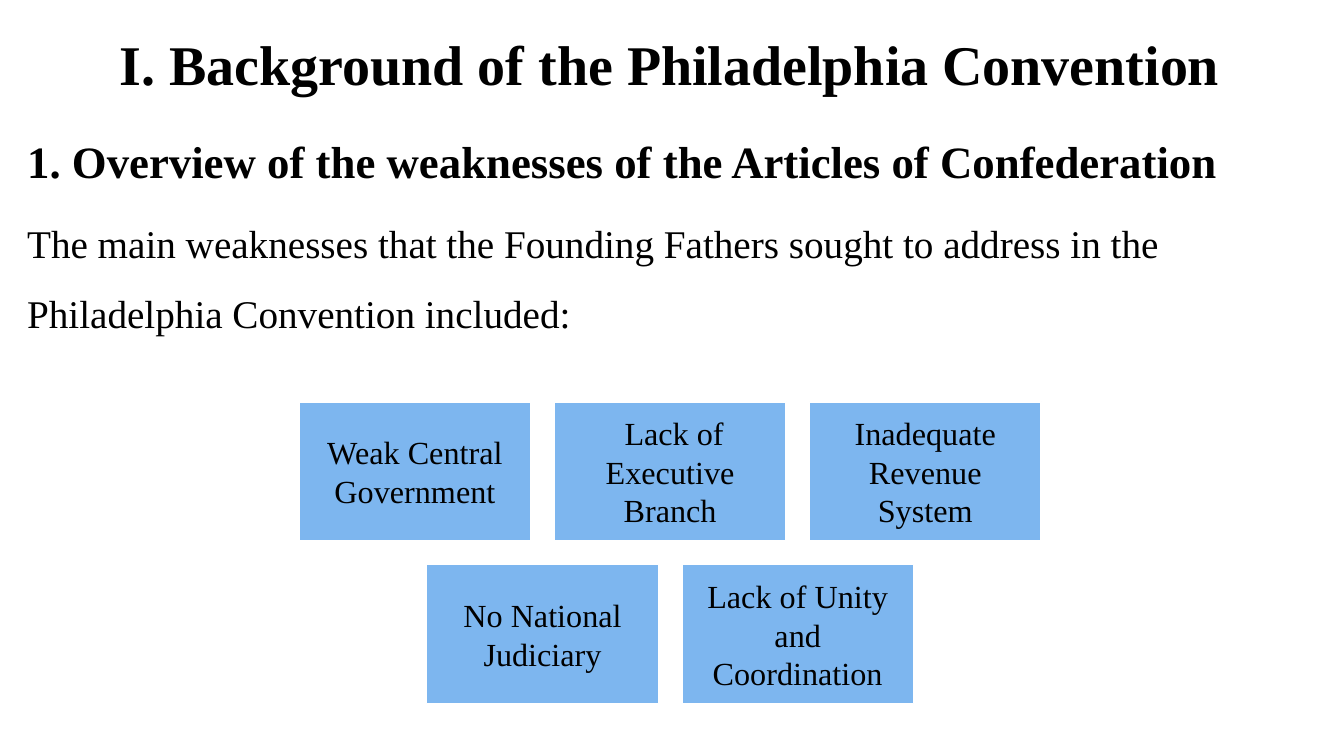
"""Build the slide on the background of the Philadelphia Convention."""
from dataclasses import dataclass

from lxml import etree
from pptx import Presentation
from pptx.dml.color import RGBColor
from pptx.enum.shapes import MSO_SHAPE
from pptx.enum.text import MSO_ANCHOR, MSO_AUTO_SIZE, PP_ALIGN
from pptx.oxml.ns import qn
from pptx.util import Cm, Pt

RECTANGLE = MSO_SHAPE.RECTANGLE
MIDDLE, TOP = MSO_ANCHOR.MIDDLE, MSO_ANCHOR.TOP
NO_AUTOFIT = MSO_AUTO_SIZE.NONE
CENTER, LEFT = PP_ALIGN.CENTER, PP_ALIGN.LEFT
TITLE_AND_CONTENT = 1


@dataclass(frozen=True)
class Theme:
    """Fonts, colours and type sizes of the slide."""
    font: str = "Times New Roman"
    ink: RGBColor = RGBColor(0x00, 0x00, 0x00)
    card: RGBColor = RGBColor(0x7D, 0xB6, 0xEF)
    edge: RGBColor = RGBColor(0xFF, 0xFF, 0xFF)
    title_size: int = 40
    heading_size: int = 32
    body_size: int = 28
    card_size: int = 23


THEME = Theme()

TITLE = "I. Background of the Philadelphia Convention"
HEADING = "1. Overview of the weaknesses of the Articles of Confederation"
INTRODUCTION = ("The main weaknesses that the Founding Fathers sought to address "
                "in the Philadelphia Convention included:")
WEAKNESS_ROWS = [
    ["Weak Central Government", " Lack of Executive Branch", "Inadequate Revenue System"],
    ["No National Judiciary", "Lack of Unity and Coordination"],
]

TEXT_LEFT, TEXT_WIDTH = 0.43, 32.89
CARD_WIDTH, CARD_HEIGHT = 5.84, 3.5
COLUMN_STEP, ROW_STEP = 6.43, 4.1
CARDS_CENTER, CARDS_TOP = 16.89, 10.13


def place(shape, left, top, width, height):
    """Move and size a shape, in centimetres."""
    shape.left, shape.top = Cm(left), Cm(top)
    shape.width, shape.height = Cm(width), Cm(height)


def write(paragraph, text, size, bold=False, align=LEFT):
    """Fill a paragraph and format its runs."""
    paragraph.text = text
    paragraph.alignment = align
    for run in paragraph.runs:
        run.font.name = THEME.font
        run.font.size = Pt(size)
        run.font.bold = bold
        run.font.color.rgb = THEME.ink


def remove_bullet(paragraph):
    """Take the bullet and its hanging indent off a paragraph."""
    properties = paragraph._p.get_or_add_pPr()
    properties.set("marL", "0")
    properties.set("indent", "0")
    etree.SubElement(properties, qn("a:buNone"))


def add_title(slide):
    """Fill the title placeholder."""
    title = slide.shapes.title
    place(title, TEXT_LEFT, 0.53, TEXT_WIDTH, 2.13)
    title.text_frame.auto_size = NO_AUTOFIT
    title.text_frame.vertical_anchor = MIDDLE
    write(title.text_frame.paragraphs[0], TITLE, THEME.title_size, True, CENTER)


def add_overview(slide):
    """Fill the body placeholder with the heading and the introduction."""
    overview = slide.placeholders[1]
    place(overview, TEXT_LEFT, 2.57, TEXT_WIDTH, 7.2)
    frame = overview.text_frame
    frame.auto_size = NO_AUTOFIT
    frame.vertical_anchor = TOP
    heading, introduction = frame.paragraphs[0], frame.add_paragraph()
    write(heading, HEADING, THEME.heading_size, bold=True)
    write(introduction, INTRODUCTION, THEME.body_size)
    for paragraph, space in ((heading, 0), (introduction, 5.6)):
        paragraph.line_spacing = 1.5
        paragraph.space_before = Pt(space)
        remove_bullet(paragraph)


def add_card(slide, weakness, left, top):
    """Draw one weakness as a filled rectangle."""
    card = slide.shapes.add_shape(
        RECTANGLE, Cm(left), Cm(top), Cm(CARD_WIDTH), Cm(CARD_HEIGHT))
    card.shadow.inherit = False
    card.fill.solid()
    card.fill.fore_color.rgb = THEME.card
    card.line.color.rgb = THEME.edge
    card.line.width = Pt(1)
    frame = card.text_frame
    frame.word_wrap = True
    frame.vertical_anchor = MIDDLE
    frame.margin_left = frame.margin_right = Cm(0.25)
    frame.margin_top = frame.margin_bottom = Cm(0.25)
    write(frame.paragraphs[0], weakness, THEME.card_size, align=CENTER)


def add_cards(slide):
    """Lay out the weaknesses in centred rows."""
    for row, weaknesses in enumerate(WEAKNESS_ROWS):
        row_width = (len(weaknesses) - 1) * COLUMN_STEP + CARD_WIDTH
        row_left = CARDS_CENTER - row_width / 2
        for column, weakness in enumerate(weaknesses):
            add_card(slide, weakness, row_left + column * COLUMN_STEP,
                     CARDS_TOP + row * ROW_STEP)


def main():
    """Build and save the slide."""
    deck = Presentation()
    deck.slide_width, deck.slide_height = Cm(33.87), Cm(19.05)
    slide = deck.slides.add_slide(deck.slide_layouts[TITLE_AND_CONTENT])
    add_title(slide)
    add_overview(slide)
    add_cards(slide)
    deck.save("out.pptx")


if __name__ == "__main__":
    main()
